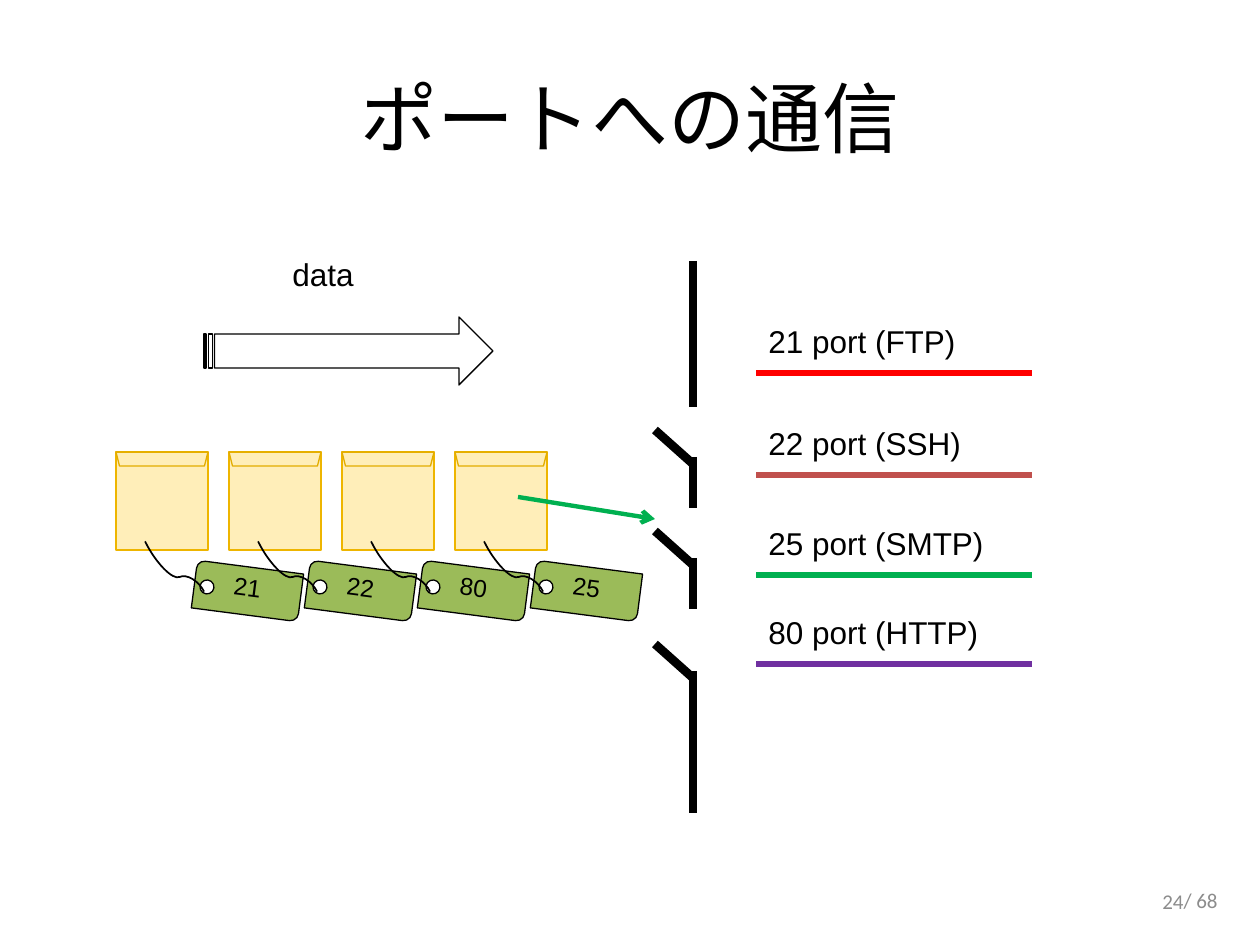
from dataclasses import dataclass

from lxml import etree
from pptx import Presentation
from pptx.dml.color import RGBColor
from pptx.enum.shapes import MSO_CONNECTOR, MSO_SHAPE
from pptx.enum.text import MSO_ANCHOR, PP_ALIGN
from pptx.oxml.ns import qn
from pptx.util import Emu, Pt

STRAIGHT, CURVE = MSO_CONNECTOR.STRAIGHT, MSO_CONNECTOR.CURVE
RECTANGLE, TRAPEZOID = MSO_SHAPE.RECTANGLE, MSO_SHAPE.TRAPEZOID
TAG, OVAL = MSO_SHAPE.ROUND_2_DIAG_RECTANGLE, MSO_SHAPE.OVAL
STRIPED_ARROW = MSO_SHAPE.STRIPED_RIGHT_ARROW
LEFT, CENTER, RIGHT = PP_ALIGN.LEFT, PP_ALIGN.CENTER, PP_ALIGN.RIGHT
TOP, MIDDLE = MSO_ANCHOR.TOP, MSO_ANCHOR.MIDDLE

EMU_PER_PX = 914400 / 126
COLORS = {
    "black": "000000", "white": "FFFFFF", "grey": "8C8C8C",
    "paper": "FFEEB9", "paper edge": "EEB500", "flap edge": "E2AC00",
    "tag": "9BBB59", "red": "FF0000", "brick": "C0504D",
    "green": "00B050", "purple": "7030A0",
}
PACKET_PITCH = 113
WALL_X, DOOR_X = 693, 655
WALL_WIDTH = 5
TAG_TILT = 7.4


@dataclass
class Port:
    label: str
    top: int
    color: str


PACKET_TAGS = ["21", "22", "80", "25"]
DOOR_TOPS = [430, 531, 644]
PORTS = [
    Port("21 port (FTP)", 316, "red"),
    Port("22 port (SSH)", 418, "brick"),
    Port("25 port (SMTP)", 518, "green"),
    Port("80 port (HTTP)", 607, "purple"),
]


def px(length: int) -> Emu:
    return Emu(round(length * EMU_PER_PX))


def rgb(name: str) -> RGBColor:
    return RGBColor.from_string(COLORS[name])


def write(frame, text: str, *, size: int = 18, font: str = "Arial",
          color: str = "black", align=LEFT, anchor=TOP) -> None:
    frame.word_wrap = True
    frame.vertical_anchor = anchor
    para = frame.paragraphs[0]
    para.alignment = align
    span = para.add_run()
    span.text = text
    span.font.size = Pt(size)
    span.font.name = font
    span.font.color.rgb = rgb(color)


def add_text(page, text: str, left: int, top: int, width: int, height: int,
             *, rotation: float = 0, **text_format) -> None:
    box = page.shapes.add_textbox(px(left), px(top), px(width), px(height))
    box.rotation = rotation
    write(box.text_frame, text, **text_format)


def add_block(page, kind, left: int, top: int, width: int, height: int, *,
              fill: str | None = None, line: str = "black", rotation: float = 0):
    block = page.shapes.add_shape(kind, px(left), px(top), px(width), px(height))
    block.shadow.inherit = False
    block.rotation = rotation
    if fill:
        block.fill.solid()
        block.fill.fore_color.rgb = rgb(fill)
    else:
        block.fill.background()
    block.line.color.rgb = rgb(line)
    block.line.width = Pt(0.75)
    return block


def add_line(page, x1: int, y1: int, x2: int, y2: int, *,
             color: str = "black", width: float = 1, kind=STRAIGHT):
    line = page.shapes.add_connector(kind, px(x1), px(y1), px(x2), px(y2))
    line.line.color.rgb = rgb(color)
    line.line.width = Pt(width)
    etree.SubElement(line.element.spPr, qn("a:effectLst"))
    return line


def add_string(page, left: int) -> None:
    """Draw the curved string that ties a tag to its envelope."""
    string = add_line(page, left + 71, 551, left, 582, kind=CURVE)
    properties = string.element.spPr
    properties.find(qn("a:xfrm")).set("rot", str(244 * 60000))
    adjustments = properties.find(qn("a:prstGeom")).find(qn("a:avLst"))
    etree.SubElement(adjustments, qn("a:gd"), name="adj1", fmla="val 66500")


def add_packet(page, number: str, left: int) -> None:
    """Draw an envelope with a tilted, numbered tag."""
    add_block(page, RECTANGLE, left, 452, 92, 98, fill="paper", line="paper edge")
    flap = add_block(page, TRAPEZOID, left, 452, 92, 14, line="flap edge")
    flap.element.spPr.find(qn("a:xfrm")).set("flipV", "1")
    add_block(page, TAG, left + 78, 567, 107, 48, fill="tag", rotation=TAG_TILT)
    add_block(page, OVAL, left + 84, 580, 14, 14, fill="white", rotation=TAG_TILT)
    add_string(page, left + 23)
    add_text(page, number, left + 105, 567, 72, 49, size=14, rotation=TAG_TILT)


def add_door(page, top: int) -> None:
    """Draw an open door and the piece of wall it hangs on."""
    add_line(page, WALL_X, top + 27, WALL_X, top + 78, width=WALL_WIDTH)
    add_line(page, DOOR_X, top, WALL_X, top + 34, width=WALL_WIDTH)


def add_port(page, port: Port) -> None:
    add_text(page, port.label, 756, port.top, 326, 58)
    add_line(page, 756, port.top + 57, 1032, port.top + 57,
             color=port.color, width=3)


def main() -> None:
    deck = Presentation()
    deck.slide_width, deck.slide_height = px(1260), px(945)
    page = deck.slides.add_slide(deck.slide_layouts[5])

    title = page.shapes.title
    title.left, title.top, title.width, title.height = map(px, (63, 38, 1134, 158))
    write(title.text_frame, "ポートへの通信", size=44, font="Calibri",
          align=CENTER, anchor=MIDDLE)

    for index, number in enumerate(PACKET_TAGS):
        add_packet(page, number, 116 + index * PACKET_PITCH)

    add_line(page, WALL_X, 261, WALL_X, 407, width=WALL_WIDTH)
    for top in DOOR_TOPS:
        add_door(page, top)
    add_line(page, WALL_X, 722, WALL_X, 813, width=WALL_WIDTH)

    for port in PORTS:
        add_port(page, port)

    add_block(page, STRIPED_ARROW, 204, 317, 289, 68, fill="white")
    add_text(page, "data", 280, 249, 163, 73)

    route = add_line(page, 518, 497, DOOR_X, 519, color="green", width=2.5)
    etree.SubElement(route.line._get_or_add_ln(), qn("a:tailEnd"), type="arrow")

    for text, left, top in (("24", 902, 876), ("/ 68", 936, 875)):
        add_text(page, text, left, top, 294, 50, size=12, font="Calibri",
                 color="grey", align=RIGHT, anchor=MIDDLE)

    deck.save("out.pptx")


if __name__ == "__main__":
    main()
